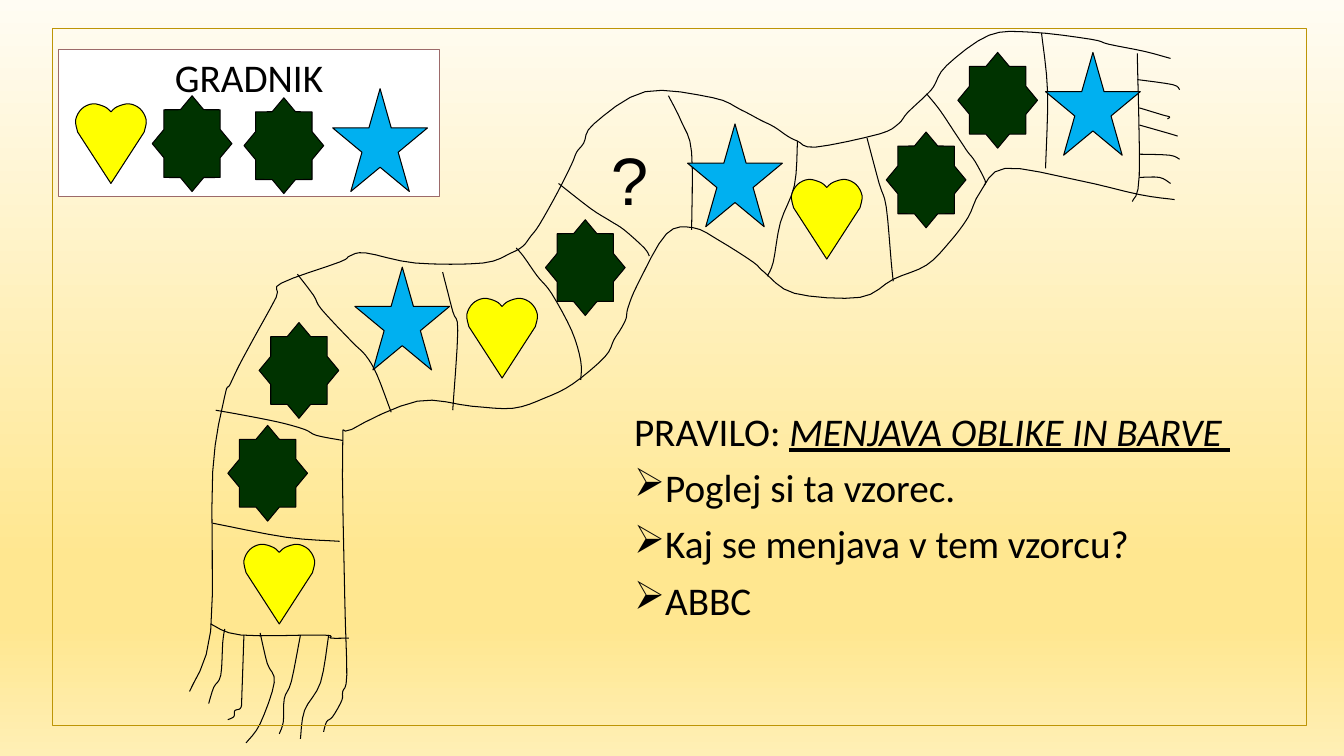
from lxml import etree
from pptx import Presentation
from pptx.dml.color import RGBColor
from pptx.enum.shapes import MSO_SHAPE
from pptx.enum.text import MSO_ANCHOR, PP_ALIGN
from pptx.oxml.ns import qn
from pptx.util import Inches, Pt

RECTANGLE, STAR_5, STAR_8 = MSO_SHAPE.RECTANGLE, MSO_SHAPE.STAR_5_POINT, MSO_SHAPE.STAR_8_POINT
TOP, CENTER = MSO_ANCHOR.TOP, PP_ALIGN.CENTER
BLACK = RGBColor(0x00, 0x00, 0x00)
WHITE = RGBColor(0xFF, 0xFF, 0xFF)
YELLOW = RGBColor(0xFF, 0xFF, 0x00)
GREEN = RGBColor(0x00, 0x33, 0x00)
BLUE = RGBColor(0x00, 0xB0, 0xF0)
MAUVE = RGBColor(0x9C, 0x6A, 0x6A)
GOLD = RGBColor(0xBD, 0x95, 0x06)
BACKGROUND = [(0, RGBColor(0xFF, 0xFC, 0xF3)), (74, RGBColor(0xFF, 0xE7, 0x90)),
              (83, RGBColor(0xFF, 0xE7, 0x90)), (100, RGBColor(0xFF, 0xEF, 0xB5))]


def smooth(points, steps=4):
    """Points of a Catmull-Rom curve through the given points."""
    ends = [points[0], *points, points[-1]]
    curve = [points[0]]
    for a, b, c, d in zip(ends, ends[1:], ends[2:], ends[3:]):
        for step in range(1, steps + 1):
            t = step / steps
            curve.append(tuple(
                (2 * q + (r - p) * t + (2 * p - 5 * q + 4 * r - s) * t**2
                 + (3 * q - p - 3 * r + s) * t**3) / 2
                for p, q, r, s in zip(a, b, c, d)))
    return curve


def paint(shape, fill, line=BLACK, width=0.75):
    shape.shadow.inherit = False
    if fill is None:
        shape.fill.background()
    else:
        shape.fill.solid()
        shape.fill.fore_color.rgb = fill
    shape.line.color.rgb = line
    shape.line.width = Pt(width)


prs = Presentation()
prs.slide_width, prs.slide_height = Inches(13.33), Inches(7.5)
slide = prs.slides.add_slide(prs.slide_layouts[6])

# Background gradient, from top to bottom
background = slide.background.fill
background.gradient()
background.gradient_angle = 270
stops = slide._element.find(".//" + qn("a:gsLst"))
for stop in list(stops):
    stops.remove(stop)
for percent, color in BACKGROUND:
    stop = etree.SubElement(stops, qn("a:gs"), pos=str(percent * 1000))
    etree.SubElement(stop, qn("a:srgbClr"), val=str(color))

# Scarf: long edges, then seams, then fringes
edges = [
    [(1.88, 6.86), (2.09, 6.26), (2.11, 4.68), (2.23, 3.93), (2.28, 3.82), (2.37, 3.63),
     (2.51, 3.37), (2.74, 2.95), (2.79, 2.81), (3.37, 2.6), (3.47, 2.54), (3.63, 2.51),
     (4.12, 2.61), (4.79, 2.61), (5.07, 2.51), (5.19, 2.44), (5.26, 2.35), (5.35, 2.23),
     (5.53, 1.91), (5.67, 1.63), (5.72, 1.51), (5.79, 1.42), (5.89, 1.23), (6.4, 0.91),
     (7.07, 0.97), (7.35, 1.09), (7.54, 1.19), (7.68, 1.26), (7.81, 1.35), (7.91, 1.4),
     (8.09, 1.46), (8.72, 1.33), (8.91, 1.23), (9, 1.12), (9.18, 0.95), (9.26, 0.86),
     (9.39, 0.65), (9.81, 0.35), (10.23, 0.32), (10.82, 0.39), (11, 0.44), (11.35, 0.51),
     (11.61, 0.58)],
    [(3.21, 7.26), (3.24, 7.16), (3.3, 7.11), (3.39, 6.95), (3.4, 6.86), (3.44, 6.7),
     (3.42, 5.93), (3.4, 4.42), (3.49, 4.26), (4.14, 3.98), (4.68, 4.03), (5.09, 4.05),
     (5.4, 3.95), (5.68, 3.81), (6, 3.54), (6.09, 3.37), (6.16, 3.26), (6.21, 3.16),
     (6.23, 3.05), (6.33, 2.81), (6.61, 2.32), (6.88, 2.26), (7.14, 2.39), (7.47, 2.6),
     (7.58, 2.7), (7.88, 2.91), (8.53, 2.95), (8.86, 2.77), (9.19, 2.63), (9.42, 2.4),
     (9.6, 2.16), (9.72, 1.91), (9.97, 1.67), (10.7, 1.79), (11.3, 1.93), (11.65, 1.98)],
]
seams = [
    [(2.09, 6.19), (2.39, 6.3), (3.21, 6.3), (3.28, 6.33), (3.46, 6.33)],
    [(2.11, 5.19), (2.84, 5.33), (3.37, 5.37)],
    [(2.14, 4.07), (2.42, 4.12), (2.77, 4.19), (3.02, 4.26), (3.14, 4.32), (3.4, 4.37)],
    [(2.95, 2.72), (3.11, 2.93), (3.19, 3.07), (3.49, 3.39), (3.63, 3.53), (3.74, 3.72),
     (3.88, 4.09)],
    [(4.39, 2.7), (4.49, 3.09), (4.54, 3.28), (4.49, 4.07)],
    [(5.12, 2.46), (5.19, 2.54), (5.33, 2.74), (5.47, 2.91), (5.67, 3.28), (5.76, 3.58),
     (5.76, 3.77)],
    [(5.54, 1.82), (5.86, 2.07), (6.05, 2.19), (6.19, 2.28), (6.39, 2.46), (6.44, 2.54)],
    [(6.63, 0.95), (6.76, 1.21), (6.86, 1.51), (6.86, 2.28)],
    [(7.91, 1.4), (7.88, 1.84), (7.74, 2.21), (7.67, 2.6), (7.61, 2.74)],
    [(8.6, 1.37), (8.72, 1.82), (8.79, 2.05), (8.84, 2.6), (8.86, 2.79)],
    [(9.19, 0.93), (9.32, 1.09), (9.46, 1.3), (9.54, 1.42), (9.6, 1.51), (9.67, 1.6),
     (9.77, 1.79), (9.76, 1.84)],
    [(10.33, 0.33), (10.39, 0.91), (10.37, 1.67)],
    [(11.28, 0.53), (11.3, 1.74), (11.23, 2)],
]
fringes = [
    [(2.23, 6.24), (2.21, 6.37), (2.19, 6.7), (2.12, 6.82), (2.07, 6.98)],
    [(2.42, 6.3), (2.4, 6.88), (2.39, 7.02), (2.33, 7.05), (2.32, 7.11), (2.26, 7.14)],
    [(3.26, 6.3), (3.18, 6.77), (3.02, 7.05), (2.98, 7.33)],
    [(2.58, 6.28), (2.65, 6.58), (2.72, 6.77), (2.58, 7.18), (2.44, 7.37)],
    [(2.98, 6.3), (2.89, 6.76), (2.82, 6.93), (2.81, 7.16), (2.77, 7.28)],
    [(11.28, 0.79), (11.63, 0.84), (11.7, 0.89)],
    [(11.3, 1.07), (11.53, 1.14), (11.6, 1.16), (11.58, 1.18)],
    [(11.3, 1.76), (11.5, 1.76), (11.61, 1.82)],
    [(11.3, 1.53), (11.6, 1.54), (11.7, 1.58)],
    [(11.3, 1.24), (11.58, 1.32), (11.68, 1.35)],
]
outlines = [(smooth(line), None) for line in edges + seams + fringes]

# Hearts: one lobe, the tip and the mirrored lobe
lobe = smooth([(0, 0.08), (-0.06, 0.03), (-0.18, 0), (-0.29, 0.05), (-0.35, 0.16), (-0.33, 0.28)])
heart = lobe + [(0, 0.79)] + [(-x, y) for x, y in reversed(lobe)]
for center, top in [(2.77, 5.4), (4.98, 2.96), (8.2, 1.78), (1.1, 1.03)]:
    outlines.append(([(center + x, top + y) for x, y in heart], YELLOW))

# Box of the repeating unit
unit_box = slide.shapes.add_shape(RECTANGLE, Inches(0.58), Inches(0.49), Inches(3.78), Inches(1.46))
paint(unit_box, WHITE, MAUVE, 1)

for points, fill in outlines:
    (start_x, start_y), *rest = [(Inches(x), Inches(y)) for x, y in points]
    builder = slide.shapes.build_freeform(start_x, start_y)
    builder.add_line_segments(rest, close=fill is not None)
    paint(builder.convert_to_shape(), fill)

# Stars on the scarf and in the box
stars = [
    (STAR_8, GREEN, 0.79, 0.95, [(2.26, 4.22), (2.57, 3.2), (5.41, 2.18), (8.79, 1.31),
                                 (9.5, 0.52), (1.51, 0.95), (2.42, 0.97)]),
    (STAR_5, BLUE, 0.94, 1.02, [(3.52, 2.65), (6.82, 1.23), (10.37, 0.52), (3.3, 0.88)]),
]
for kind, color, width, height, places in stars:
    for left, top in places:
        star = slide.shapes.add_shape(kind, Inches(left), Inches(top), Inches(width), Inches(height))
        if kind == STAR_8:
            star.adjustments[0] = 0.383
        paint(star, color)

# Texts
question = slide.shapes.add_textbox(Inches(5.96), Inches(1.23), Inches(0.63), Inches(0.9))
rule = slide.shapes.add_textbox(Inches(6.19), Inches(4.04), Inches(6.65), Inches(3.38))
body = {"name": "Calibri", "size": Pt(28)}
task = {"line_spacing": 0.9, "space_before": Pt(10)}
texts = [
    (unit_box, 0.04, {"alignment": CENTER}, [[("GRADNIK", body)]]),
    (question, 0.14, {}, [[("?", {"name": "Arial", "size": Pt(48)})]]),
    (rule, 0.05, task, [
        [("PRAVILO: ", body), ("MENJAVA OBLIKE IN BARVE ", body | {"italic": True, "underline": True})],
        [("Poglej si ta vzorec.", body)],
        [("Kaj se menjava v tem vzorcu?", body)],
        [("ABBC", body)],
    ]),
]
for holder, inset, layout, lines in texts:
    frame = holder.text_frame
    frame.word_wrap = True
    frame.vertical_anchor = TOP
    frame.margin_top = Inches(inset)
    for index, runs in enumerate(lines):
        paragraph = frame.paragraphs[0] if index == 0 else frame.add_paragraph()
        for key, value in layout.items():
            setattr(paragraph, key, value)
        for words, looks in runs:
            run = paragraph.add_run()
            run.text = words
            run.font.color.rgb = BLACK
            for key, value in looks.items():
                setattr(run.font, key, value)

# Arrow bullets under the rule
for paragraph in rule.text_frame.paragraphs[1:]:
    properties = paragraph._p.get_or_add_pPr()
    properties.set("marL", str(Inches(0.25)))
    properties.set("indent", str(Inches(-0.25)))
    etree.SubElement(properties, qn("a:buChar"), char="➢")

# Slide frame
border = slide.shapes.add_shape(RECTANGLE, Inches(0.52), Inches(0.28), Inches(12.44), Inches(6.92))
paint(border, None, GOLD, 1)

prs.save("out.pptx")
